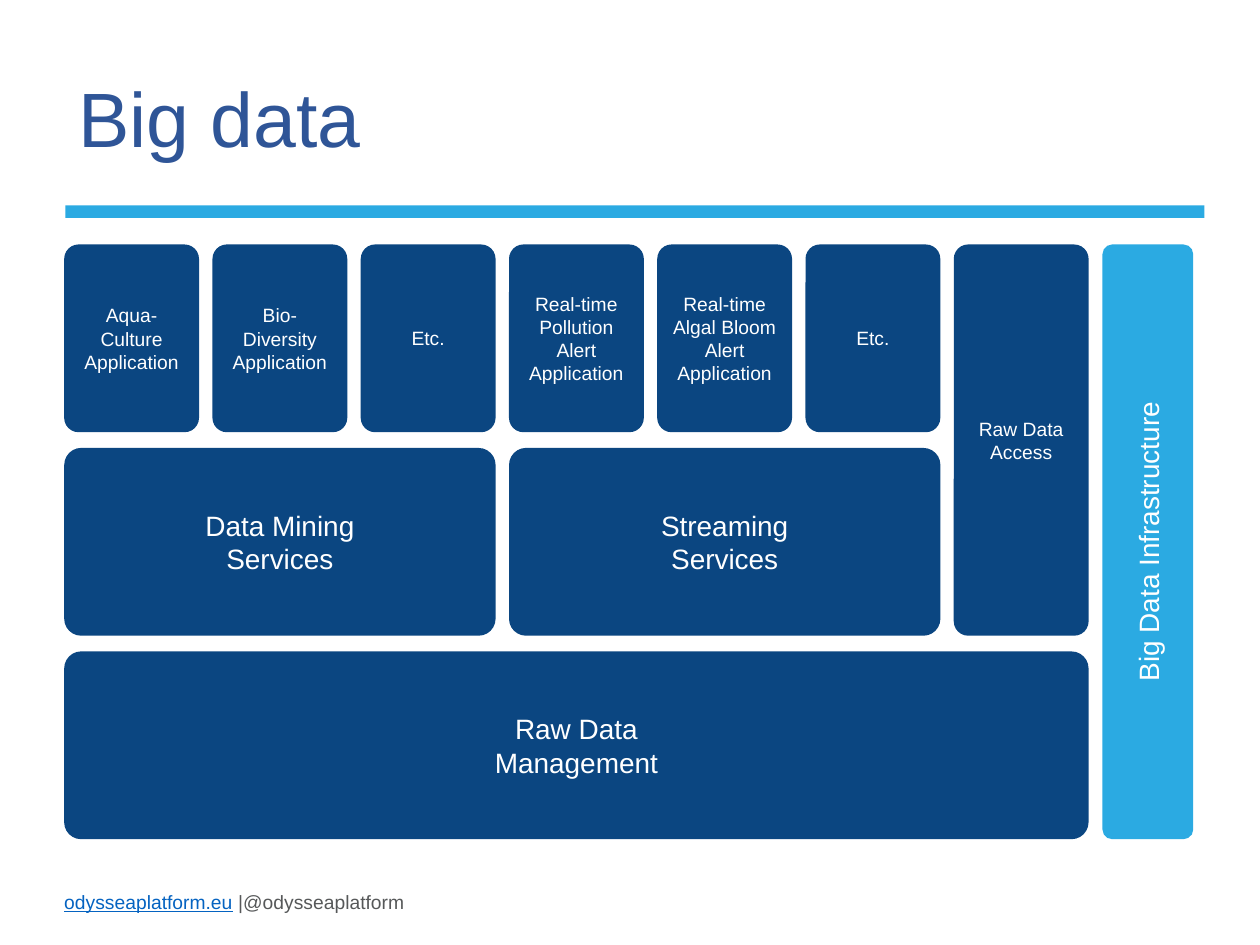
from dataclasses import dataclass

from pptx import Presentation
from pptx.dml.color import RGBColor
from pptx.enum.shapes import MSO_SHAPE
from pptx.enum.text import MSO_ANCHOR, MSO_AUTO_SIZE, PP_ALIGN
from pptx.util import Inches, Pt

WHITE = RGBColor(0xFF, 0xFF, 0xFF)
NAVY = RGBColor(0x0B, 0x46, 0x81)
SKY = RGBColor(0x2B, 0xAA, 0xE2)
TITLE_BLUE = RGBColor(0x2F, 0x55, 0x97)
LINK_BLUE = RGBColor(0x05, 0x63, 0xC1)
GREY = RGBColor(0x56, 0x58, 0x59)
FONT = "Arial"

# Block grid, in inches: seven columns by three rows
LEFT, TOP = 0.51, 1.94
CELL_WIDTH, CELL_HEIGHT = 1.07, 1.49
COLUMN_STEP = (7.57 - LEFT) / 6
ROW_STEP = (5.17 - TOP) / 2


@dataclass
class Block:
    text: str
    column: int
    row: int
    columns: int = 1
    rows: int = 1
    lines: int = 1
    label_width: float = 0.83
    size: int = 11
    corner: float = 0.107


BLOCKS = [
    Block("Aqua-Culture Application", 0, 0, lines=3),
    Block("Bio-Diversity Application", 1, 0, lines=3),
    Block("Etc.", 2, 0),
    Block("Real-time Pollution Alert Application", 3, 0, lines=4),
    Block("Real-time Algal Bloom Alert Application", 4, 0, lines=4),
    Block("Etc.", 5, 0),
    Block("Raw Data Access", 6, 0, rows=2, lines=2),
    Block("Data Mining Services", 0, 1, 3, 1, 2, 1.21, 16, 0.09),
    Block("Streaming Services", 3, 1, 3, 1, 2, 1.21, 16, 0.09),
    Block("Raw Data Management", 0, 2, 7, 1, 2, 1.46, 16, 0.09),
]


def span_length(count: int, step: float, cell: float) -> float:
    return (count - 1) * step + cell


def add_run(para, text: str, size: int, color: RGBColor, underline: bool = False) -> None:
    span = para.add_run()
    span.text = text
    span.font.name = FONT
    span.font.size = Pt(size)
    span.font.color.rgb = color
    span.font.underline = underline


def add_panel(page, kind, left: float, top: float, width: float, height: float, color: RGBColor):
    panel = page.shapes.add_shape(kind, Inches(left), Inches(top), Inches(width), Inches(height))
    panel.shadow.inherit = False
    panel.fill.solid()
    panel.fill.fore_color.rgb = color
    panel.line.fill.background()
    return panel


def add_text_box(page, left: float, top: float, width: float, height: float):
    box = page.shapes.add_textbox(Inches(left), Inches(top), Inches(width), Inches(height))
    frame = box.text_frame
    frame.word_wrap = True
    frame.vertical_anchor = MSO_ANCHOR.MIDDLE
    frame.margin_left = frame.margin_right = frame.margin_top = frame.margin_bottom = 0
    return box


def add_block(page, block: Block, left: float, width: float, color: RGBColor, rotation: int = 0) -> None:
    top = TOP + block.row * ROW_STEP
    height = span_length(block.rows, ROW_STEP, CELL_HEIGHT)
    panel = add_panel(page, MSO_SHAPE.ROUNDED_RECTANGLE, left, top, width, height, color)
    panel.adjustments[0] = block.corner

    # The label shares the centre of its block
    label_height = block.lines * block.size * 1.2 / 72
    box = add_text_box(page, left + (width - block.label_width) / 2,
                       top + (height - label_height) / 2, block.label_width, label_height)
    box.rotation = rotation
    box.text_frame.auto_size = MSO_AUTO_SIZE.SHAPE_TO_FIT_TEXT
    para = box.text_frame.paragraphs[0]
    para.alignment = PP_ALIGN.CENTER
    add_run(para, block.text, block.size, WHITE)


def main() -> None:
    deck = Presentation()
    deck.slide_width, deck.slide_height = Inches(10), Inches(7.5)
    page = deck.slides.add_slide(deck.slide_layouts[5])

    # Title and rule
    title = page.shapes.title
    title.left, title.top = Inches(0.52), Inches(0.4)
    title.width, title.height = Inches(7.55), Inches(1.14)
    title.text_frame.vertical_anchor = MSO_ANCHOR.MIDDLE
    heading = title.text_frame.paragraphs[0]
    heading.alignment = PP_ALIGN.LEFT
    heading.line_spacing = 0.9
    add_run(heading, "Big data", 44, TITLE_BLUE)
    add_panel(page, MSO_SHAPE.RECTANGLE, 0.52, 1.63, 9.04, 0.1, SKY)

    # Architecture blocks
    for block in BLOCKS:
        add_block(page, block, LEFT + block.column * COLUMN_STEP,
                  span_length(block.columns, COLUMN_STEP, CELL_WIDTH), NAVY)

    # Infrastructure column beside the grid
    infrastructure = Block("Big Data Infrastructure", 7, 0, rows=3, label_width=2.35, size=16)
    add_block(page, infrastructure, 8.75, 0.72, SKY, rotation=270)

    # Footer
    footer = add_text_box(page, LEFT, 7.06, 4.77, 0.19)
    para = footer.text_frame.paragraphs[0]
    add_run(para, "odysseaplatform.eu", 11, LINK_BLUE, underline=True)
    add_run(para, " |@odysseaplatform", 11, GREY)

    deck.save("out.pptx")


if __name__ == "__main__":
    main()
